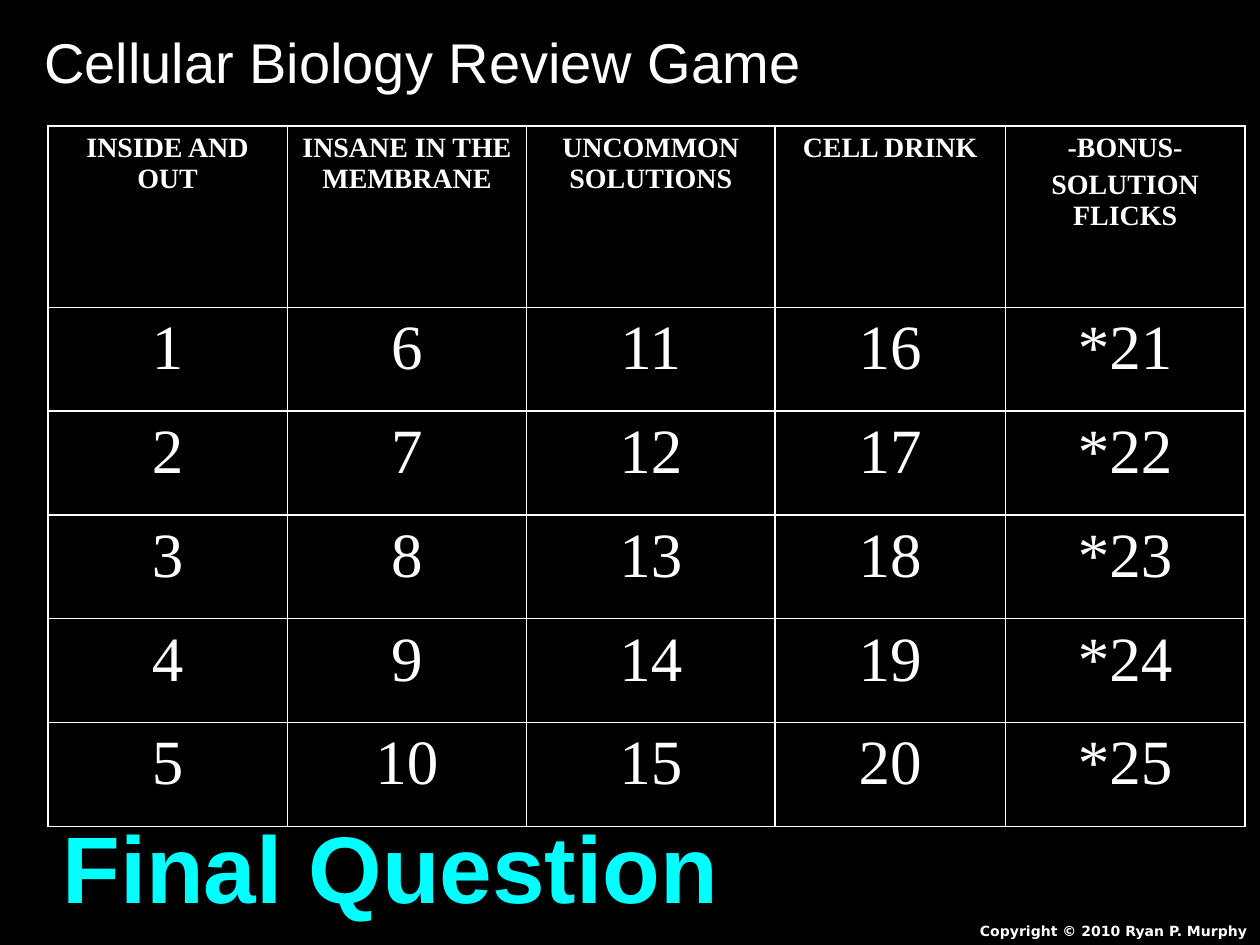
from copy import deepcopy
from dataclasses import dataclass

from lxml.etree import SubElement
from pptx import Presentation
from pptx.dml.color import RGBColor
from pptx.enum.text import MSO_AUTO_SIZE, MSO_ANCHOR, PP_ALIGN
from pptx.oxml.ns import qn
from pptx.util import Inches, Pt


@dataclass(frozen=True)
class Theme:
    back: str = "000000"
    ink: str = "FFFFFF"
    glow: str = "00FFFF"
    edge: str = "0D0D0D"
    sans: str = "Arial"
    serif: str = "Times New Roman"
    small: str = "DejaVu Sans"
    title: int = 32
    head: int = 16
    num: int = 36
    final: int = 54
    note: int = 8


THEME = Theme()
HEADS = [
    "INSIDE AND\vOUT",
    "INSANE IN THE MEMBRANE",
    "UNCOMMON SOLUTIONS",
    "CELL DRINK",
    "-BONUS-\nSOLUTION FLICKS",
]
WIDTHS = [1.9, 1.9, 1.97, 1.83, 1.9]
COUNT = 5
HIGH, TOP = 5.56, 1.44


def add_line(props, tag, color, width, index):
    line = props.makeelement(qn(tag), {"w": str(Pt(width))})
    fill = SubElement(line, qn("a:solidFill"))
    SubElement(fill, qn("a:srgbClr"), val=color)
    props.insert(index, line)


def write(frame, words, size, font, color=THEME.ink, bold=False,
          align=PP_ALIGN.LEFT, gap=0, edge=None):
    frame.text = words
    for index, para in enumerate(frame.paragraphs):
        para.alignment = align
        if index and gap:
            para.space_before = Pt(size * gap)
        for run in para.runs:
            run.font.size = Pt(size)
            run.font.name = font
            run.font.bold = bold
            run.font.color.rgb = RGBColor.from_string(color)
            if edge:
                add_line(run._r.get_or_add_rPr(), "a:ln", edge, 1.4, 0)
        for mark in para._p.findall(qn("a:br")):
            mark.append(deepcopy(para.runs[0]._r.rPr))


def add_title(slide, words):
    title = slide.shapes.title
    title.left, title.top = Inches(0.25), Inches(0.17)
    title.width, title.height = Inches(9.75), Inches(0.63)
    title.text_frame.vertical_anchor = MSO_ANCHOR.TOP
    write(title.text_frame, words, THEME.title, THEME.sans)


def add_label(slide, words, box, wrap=True, **form):
    frame = slide.shapes.add_textbox(*map(Inches, box)).text_frame
    frame.word_wrap = wrap
    frame.auto_size = MSO_AUTO_SIZE.SHAPE_TO_FIT_TEXT
    write(frame, words, **form)


def fill_cell(cell, words, **form):
    write(cell.text_frame, words, font=THEME.serif,
          align=PP_ALIGN.CENTER, gap=0.2, **form)
    props = cell._tc.get_or_add_tcPr()
    for index, side in enumerate("LRTB"):
        add_line(props, f"a:ln{side}", THEME.ink, 1, index)
    cell.fill.background()


def add_board(slide):
    table = slide.shapes.add_table(
        COUNT + 1, len(HEADS), Inches(0.38), Inches(1),
        Inches(sum(WIDTHS)), Inches(HIGH)).table
    table.first_row = table.horz_banding = False
    for row in table.rows:
        row.height = Inches((HIGH - TOP) / COUNT)
    table.rows[0].height = Inches(TOP)
    for col, (head, width) in enumerate(zip(HEADS, WIDTHS)):
        table.columns[col].width = Inches(width)
        fill_cell(table.cell(0, col), head, size=THEME.head, bold=True)
        star = "*" if col == len(HEADS) - 1 else ""
        for row in range(1, COUNT + 1):
            fill_cell(table.cell(row, col), f"{star}{col * COUNT + row}",
                      size=THEME.num)


def main():
    deck = Presentation()
    deck.slide_width, deck.slide_height = Inches(10), Inches(7.5)
    slide = deck.slides.add_slide(deck.slide_layouts[5])
    slide.background.fill.solid()
    slide.background.fill.fore_color.rgb = RGBColor.from_string(THEME.back)
    add_board(slide)
    add_label(slide, "Copyright © 2010 Ryan P. Murphy",
              (7.08, 7.27, 2.92, 0.23), size=THEME.note, font=THEME.small,
              bold=True, align=PP_ALIGN.RIGHT)
    add_title(slide, "Cellular Biology Review Game")
    add_label(slide, "Final Question", (0.37, 6.37, 5.46, 1.01), wrap=False,
              size=THEME.final, font=THEME.sans, color=THEME.glow,
              bold=True, align=PP_ALIGN.CENTER, edge=THEME.edge)
    deck.save("out.pptx")


if __name__ == "__main__":
    main()
